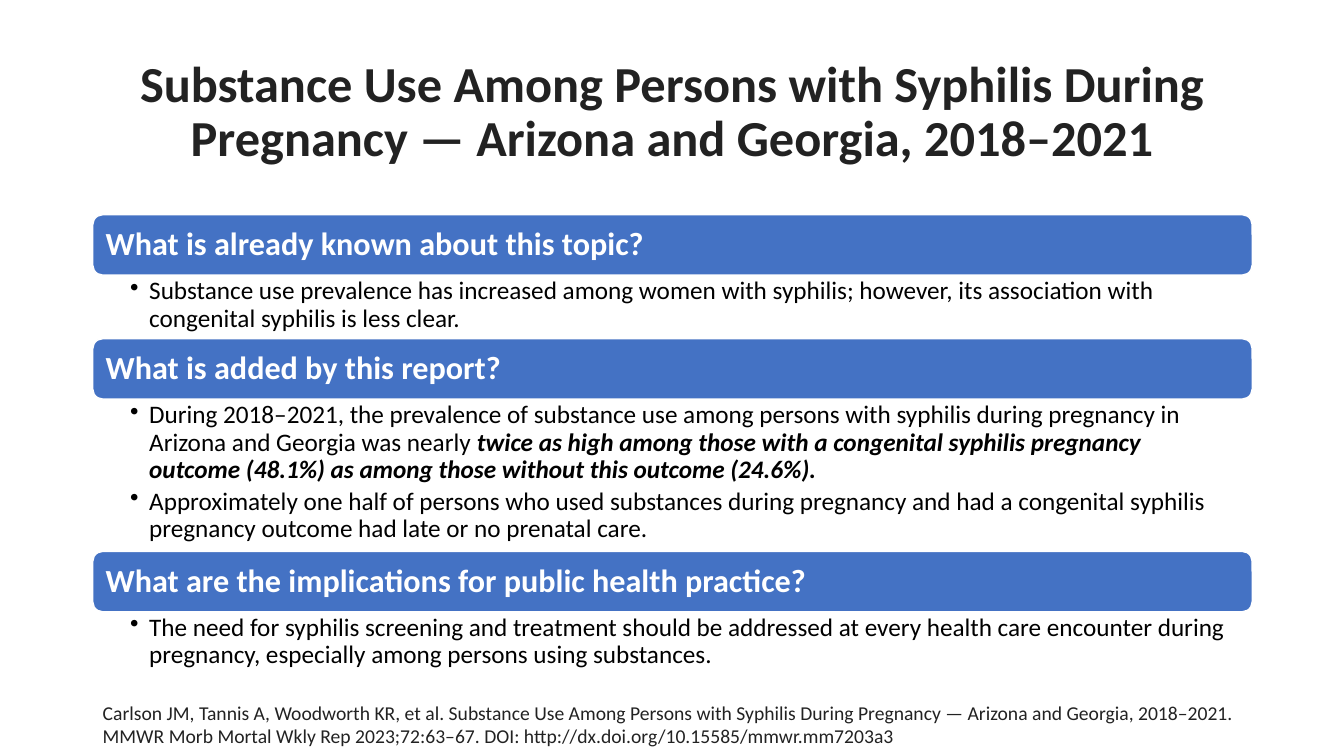
from dataclasses import dataclass

import pptx
import pptx.dml.color
import pptx.enum.shapes
import pptx.enum.text
import pptx.oxml
import pptx.oxml.ns
import pptx.util
from pptx.util import Inches

COLOURS = {"bar": "4472C4", "white": "FFFFFF", "ink": "222222", "body": "000000"}
FONT = "Calibri"
LEFT, WIDTH = 0.92, 11.5
BAR_HEIGHT = 0.6
FIRST_BAR_TOP = 2.13
BULLET_INDENT = 0.19


@dataclass
class Bullet:
    text: str
    emphasis: str = ""


@dataclass
class Section:
    question: str
    bullets: list[Bullet]
    body_height: float


SECTIONS = [
    Section("What is already known about this topic?", [
        Bullet("Substance use prevalence has increased among women with syphilis; "
               "however, its association with congenital syphilis is less clear."),
    ], 0.63),
    Section("What is added by this report?", [
        Bullet("During 2018–2021, the prevalence of substance use among persons with syphilis "
               "during pregnancy in Arizona and Georgia was nearly ",
               "twice as high among those with a congenital syphilis pregnancy outcome (48.1%) "
               "as among those without this outcome (24.6%)."),
        Bullet("Approximately one half of persons who used substances during pregnancy and had "
               "a congenital syphilis pregnancy outcome had late or no prenatal care."),
    ], 1.51),
    Section("What are the implications for public health practice?", [
        Bullet("The need for syphilis screening and treatment should be addressed at every health "
               "care encounter during pregnancy, especially among persons using substances."),
    ], 0.62),
]
TITLE = ("Substance Use Among Persons with Syphilis During Pregnancy "
         "— Arizona and Georgia, 2018–2021")
CITATION = ("Carlson JM, Tannis A, Woodworth KR, et al. Substance Use Among Persons with Syphilis "
            "During Pregnancy — Arizona and Georgia, 2018–2021. MMWR Morb Mortal Wkly Rep "
            "2023;72:63–67. DOI: http://dx.doi.org/10.15585/mmwr.mm7203a3")


def rgb(name: str) -> pptx.dml.color.RGBColor:
    return pptx.dml.color.RGBColor.from_string(COLOURS[name])


def style(paragraph, size: float, colour: str, bold: bool = False, spacing: float = 0.9) -> None:
    paragraph.font.name = FONT
    paragraph.font.size = pptx.util.Pt(size)
    paragraph.font.color.rgb = rgb(colour)
    paragraph.font.bold = bold
    paragraph.line_spacing = spacing


def add_text_frame(slide, top: float, width: float, height: float):
    box = slide.shapes.add_textbox(Inches(LEFT), Inches(top), Inches(width), Inches(height))
    box.text_frame.word_wrap = True
    return box.text_frame


def add_title(slide) -> None:
    frame = add_text_frame(slide, 0.4, WIDTH, 1.45)
    frame.vertical_anchor = pptx.enum.text.MSO_ANCHOR.MIDDLE
    heading = frame.paragraphs[0]
    heading.text = TITLE
    heading.alignment = pptx.enum.text.PP_ALIGN.CENTER
    style(heading, 36, "ink", bold=True)


def add_question_bar(slide, question: str, top: float) -> None:
    bar = slide.shapes.add_shape(
        pptx.enum.shapes.MSO_SHAPE.ROUNDED_RECTANGLE,
        Inches(LEFT), Inches(top), Inches(WIDTH), Inches(BAR_HEIGHT))
    bar.shadow.inherit = False
    bar.fill.solid()
    bar.fill.fore_color.rgb = rgb("bar")
    bar.line.color.rgb = rgb("white")
    bar.line.width = pptx.util.Pt(1)
    bar.text_frame.word_wrap = True
    bar.text_frame.vertical_anchor = pptx.enum.text.MSO_ANCHOR.MIDDLE
    heading = bar.text_frame.paragraphs[0]
    heading.text = question
    heading.alignment = pptx.enum.text.PP_ALIGN.LEFT
    style(heading, 23, "white", bold=True)


def add_bullet_mark(paragraph) -> None:
    properties = paragraph._p.get_or_add_pPr()
    properties.set("marL", str(Inches(BULLET_INDENT)))
    properties.set("indent", str(-Inches(BULLET_INDENT)))
    mark = pptx.oxml.parse_xml(f'<a:buChar {pptx.oxml.ns.nsdecls("a")} char="•"/>')
    properties.insert_element_before(mark, "a:tabLst", "a:defRPr", "a:extLst")


def add_bullets(slide, section: Section, top: float) -> None:
    frame = add_text_frame(slide, top, WIDTH, section.body_height)
    frame.margin_left, frame.margin_right = Inches(0.37), Inches(0.18)
    frame.margin_top = frame.margin_bottom = Inches(0.03)
    for index, bullet in enumerate(section.bullets):
        paragraph = frame.add_paragraph() if index else frame.paragraphs[0]
        style(paragraph, 18, "body")
        paragraph.space_after = pptx.util.Pt(3.6)
        add_bullet_mark(paragraph)
        paragraph.add_run().text = bullet.text
        if bullet.emphasis:
            finding = paragraph.add_run()
            finding.text = bullet.emphasis
            finding.font.bold = finding.font.italic = True


def add_citation(slide) -> None:
    citation = add_text_frame(slide, 6.9, 11.78, 0.57).paragraphs[0]
    citation.text = CITATION
    style(citation, 14, "ink", spacing=1.0)


def main() -> None:
    deck = pptx.Presentation()
    deck.slide_width, deck.slide_height = Inches(13.33), Inches(7.5)
    slide = deck.slides.add_slide(deck.slide_layouts[6])
    add_title(slide)
    top = FIRST_BAR_TOP
    for section in SECTIONS:
        add_question_bar(slide, section.question, top)
        add_bullets(slide, section, top + BAR_HEIGHT)
        top += BAR_HEIGHT + section.body_height
    add_citation(slide)
    deck.save("out.pptx")


if __name__ == "__main__":
    main()
